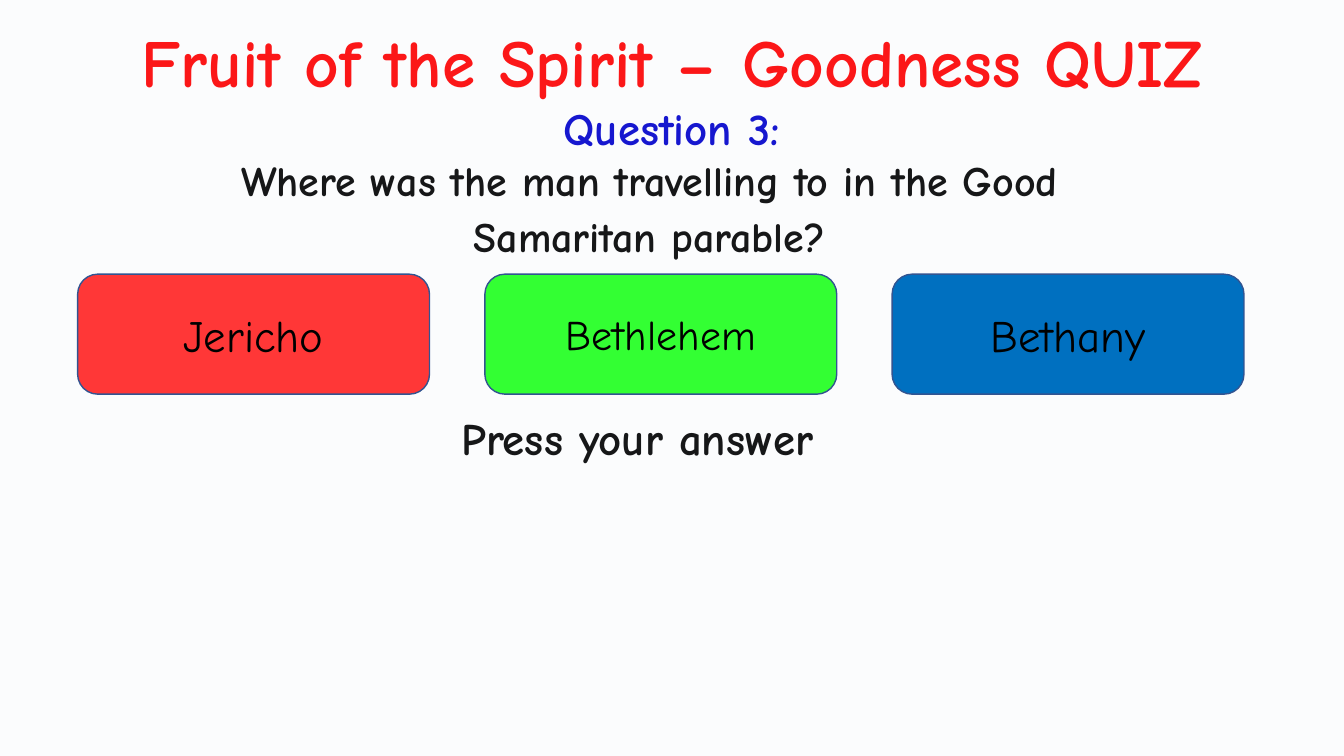
"""Build the Goodness quiz slide with a question and three answer buttons."""
from dataclasses import dataclass

from lxml.etree import SubElement
from pptx import Presentation
from pptx.dml.color import RGBColor
from pptx.enum.shapes import MSO_SHAPE as Preset
from pptx.enum.text import MSO_ANCHOR as Anchor, MSO_AUTO_SIZE as AutoSize, PP_ALIGN as Align
from pptx.oxml.ns import qn
from pptx.shapes.autoshape import Shape
from pptx.slide import Slide
from pptx.util import Emu, Inches, Pt

WIDTH, HEIGHT = Inches(13.33), Inches(7.5)
COLUMN, ROW = WIDTH / 100, HEIGHT / 100


@dataclass(frozen=True)
class Theme:
    font: str = "Comic Neue"
    title: str = "FF0000"
    heading: str = "0000CC"
    ink: str = "000000"
    outline: str = "325491"
    veil: str = "DAE3F3"
    veil_opacity: int = 10
    title_size: int = 48
    large: int = 32
    medium: int = 30


THEME = Theme()


@dataclass(frozen=True)
class Box:
    column: float
    row: float
    columns: float
    rows: float

    def emu(self) -> tuple[Emu, Emu, Emu, Emu]:
        return (Emu(round(self.column * COLUMN)), Emu(round(self.row * ROW)),
                Emu(round(self.columns * COLUMN)), Emu(round(self.rows * ROW)))


@dataclass(frozen=True)
class Line:
    text: str
    box: Box
    size: int = THEME.large
    color: str = THEME.ink
    align: Align = Align.CENTER
    spacing: Pt | float | None = None
    before: float = 0


@dataclass(frozen=True)
class Answer:
    text: str
    fill: str
    size: int = THEME.large


TITLE = Line("Fruit of the Spirit – Goodness QUIZ", Box(3.3, 2, 93.4, 12.13),
             THEME.title_size, THEME.title)
LINES = (
    Line("Where was the man travelling to in the Good Samaritan parable?",
         Box(14.18, 19.07, 68.33, 9.6), THEME.medium, spacing=Pt(40), before=10),
    Line("Press your answer", Box(33.6, 54.53, 50.5, 9.6),
         align=Align.LEFT, spacing=0.9, before=7.5),
    Line("Question 3:", Box(33.45, 12.67, 33.08, 8.53), color=THEME.heading),
)
ANSWERS = (
    Answer("Jericho", "FF3737"),
    Answer("Bethlehem", "33FF33", THEME.medium),
    Answer("Bethany", "0070C0"),
)
VEIL = Box(-4.05, -10.67, 106.43, 116.4)
FIRST_ANSWER = Box(5.78, 36.27, 26.18, 15.87)
ANSWER_PITCH = 30.3


def write(shape: Shape, line: Line, bold: bool, anchor: Anchor, wrap: bool = True) -> None:
    frame = shape.text_frame
    frame.text = line.text
    frame.word_wrap = wrap
    frame.auto_size = AutoSize.NONE
    frame.vertical_anchor = anchor
    paragraph = frame.paragraphs[0]
    paragraph.alignment = line.align
    paragraph.space_before = Pt(line.before)
    paragraph.line_spacing = line.spacing
    font = paragraph.runs[0].font
    font.name, font.size, font.bold = THEME.font, Pt(line.size), bold
    font.color.rgb = RGBColor.from_string(line.color)


def draw_panel(slide: Slide, preset: Preset, box: Box, fill: str) -> Shape:
    panel = slide.shapes.add_shape(preset, *box.emu())
    panel.shadow.inherit = False
    panel.fill.solid()
    panel.fill.fore_color.rgb = RGBColor.from_string(fill)
    panel.line.color.rgb = RGBColor.from_string(THEME.outline)
    panel.line.width = Pt(1)
    return panel


def draw_title(slide: Slide) -> None:
    title = slide.shapes.title
    title.left, title.top, title.width, title.height = TITLE.box.emu()
    write(title, TITLE, True, Anchor.TOP, wrap=False)


def draw_veil(slide: Slide) -> None:
    veil = draw_panel(slide, Preset.RECTANGLE, VEIL, THEME.veil)
    color = veil.fill._xPr.find(qn("a:solidFill"))[0]
    SubElement(color, qn("a:alpha")).set("val", str(THEME.veil_opacity * 1000))


def draw_answers(slide: Slide) -> None:
    first = FIRST_ANSWER
    for index, answer in enumerate(ANSWERS):
        box = Box(first.column + index * ANSWER_PITCH, first.row, first.columns, first.rows)
        button = draw_panel(slide, Preset.ROUNDED_RECTANGLE, box, answer.fill)
        write(button, Line(answer.text, box, answer.size), False, Anchor.MIDDLE)


def main() -> None:
    deck = Presentation()
    deck.slide_width, deck.slide_height = WIDTH, HEIGHT
    slide = deck.slides.add_slide(deck.slide_layouts[5])
    draw_title(slide)
    for line in LINES:
        write(slide.shapes.add_textbox(*line.box.emu()), line, True, Anchor.TOP)
    draw_veil(slide)
    draw_answers(slide)
    deck.save("out.pptx")


if __name__ == "__main__":
    main()
